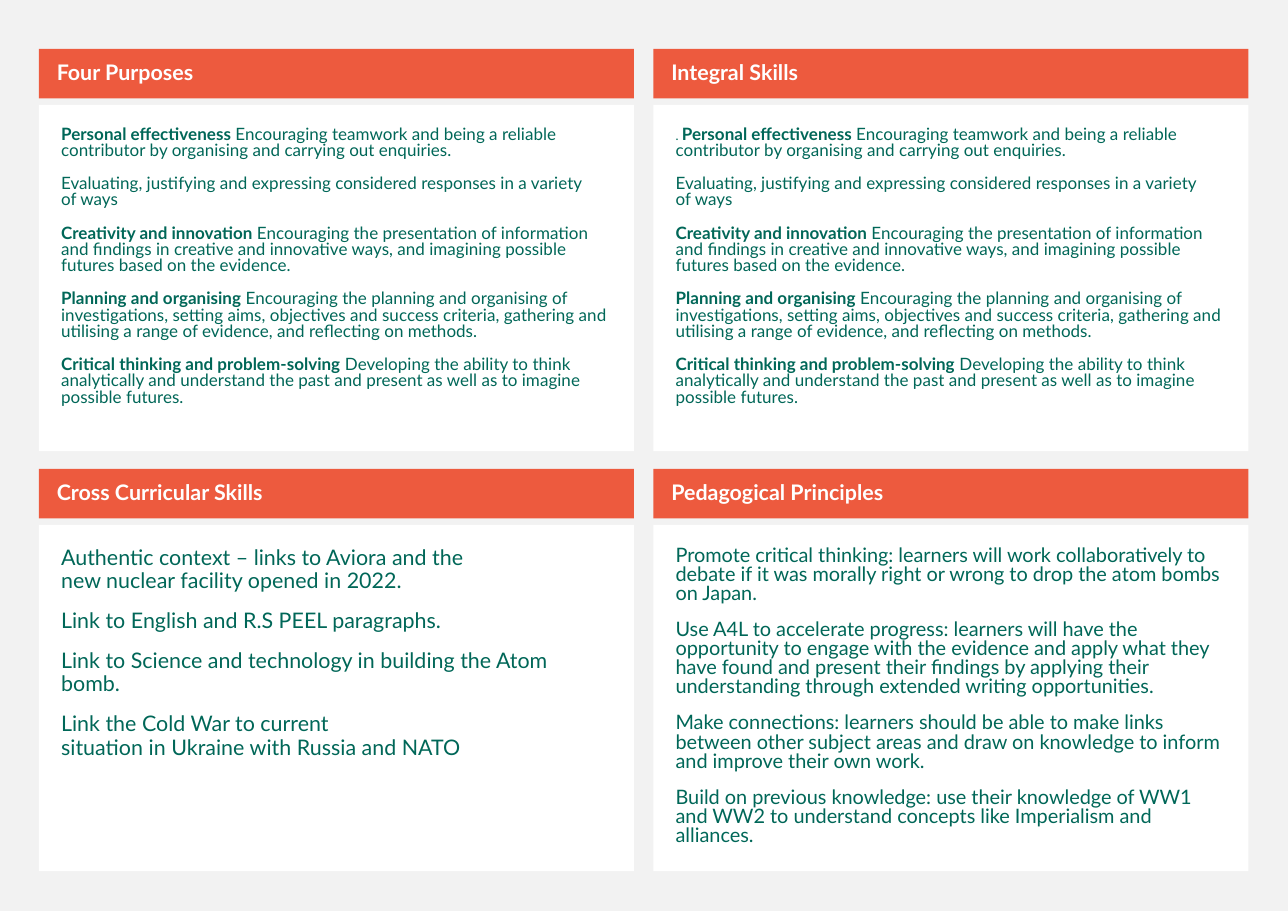
from pptx import Presentation
from pptx.dml.color import RGBColor
from pptx.enum.shapes import MSO_SHAPE
from pptx.enum.text import MSO_ANCHOR, PP_ALIGN
from pptx.util import Cm, Pt

GREY = RGBColor(0xF2, 0xF2, 0xF2)
WHITE = RGBColor(0xFF, 0xFF, 0xFF)
CORAL = RGBColor(0xED, 0x5A, 0x3E)
GREEN = RGBColor(0x00, 0x67, 0x58)
FONT = "Lato"
TIE = chr(160)  # no-break space, keeps words on one line

# Card grid, in centimetres
LEFT, TOP = 0.9, 1.13
STEP_X, STEP_Y = 14.17, 9.68
WIDTH, HEAD_H, BODY_H = 13.72, 1.14, 7.98
BODY_DROP = 1.29

# Each paragraph is a bold lead and the plain text after it
SKILLS = [
    ("Personal effectiveness",
     " Encouraging teamwork and being a reliable contributor by organising "
     "and carrying out enquiries."),
    ("", "Evaluating, justifying and expressing considered responses in a "
     f"variety of{TIE}ways"),
    ("Creativity and innovation",
     " Encouraging the presentation of information and findings in creative "
     "and innovative ways, and imagining possible futures based on the "
     "evidence."),
    ("Planning and organising",
     " Encouraging the planning and organising of investigations, setting "
     "aims, objectives and success criteria, gathering and utilising a range "
     "of evidence, and reflecting on methods."),
    ("Critical thinking and problem-solving",
     " Developing the ability to think analytically and understand the past "
     "and present as well as to imagine possible futures."),
]
CROSS = [
    ("", "Authentic context – links to Aviora and the "
     f"new{TIE}nuclear{TIE}facility{TIE}opened in 2022."),
    ("", "Link to English and R.S PEEL paragraphs."),
    ("", "Link to Science and technology in building the Atom bomb."),
    ("", "Link the Cold War to current "
     f"situation{TIE}in{TIE}Ukraine{TIE}with{TIE}Russia and NATO"),
]
PEDAGOGY = [
    ("", "Promote critical thinking: learners will work collaboratively to "
     "debate if it was morally right or wrong to drop the atom bombs on "
     "Japan."),
    ("", "Use A4L to accelerate progress: learners will have the opportunity "
     "to engage with the evidence and apply what they have found and present "
     "their findings by applying their understanding through extended "
     "writing opportunities."),
    ("", "Make connections: learners should be able to make links between "
     "other subject areas and draw on knowledge to inform and improve their "
     "own work."),
    ("", "Build on previous knowledge: use their knowledge of WW1 and WW2 to "
     "understand concepts like Imperialism and alliances."),
]

# Title, paragraphs, text size, line spacing, small opening mark
CARDS = [
    ("Four Purposes", SKILLS, 11.1, 0.8, ""),
    ("Integral Skills", SKILLS, 11.1, 0.8, f".{TIE}"),
    ("Cross Curricular Skills", CROSS, 14, 0.9, ""),
    ("Pedagogical Principles", PEDAGOGY, 13, 0.8, ""),
]


def add_box(slide, x, y, height, fill):
    box = slide.shapes.add_shape(
        MSO_SHAPE.RECTANGLE, Cm(x), Cm(y), Cm(WIDTH), Cm(height))
    box.shadow.inherit = False
    box.fill.solid()
    box.fill.fore_color.rgb = fill
    box.line.fill.background()
    box.text_frame.word_wrap = True
    return box.text_frame


def add_run(para, text, size, color, bold=False):
    run = para.add_run()
    run.text = text
    run.font.name = FONT
    run.font.size = Pt(size)
    run.font.bold = bold
    run.font.color.rgb = color


def add_head(slide, x, y, title):
    frame = add_box(slide, x, y, HEAD_H, CORAL)
    frame.vertical_anchor = MSO_ANCHOR.MIDDLE
    frame.margin_left = Cm(0.41)
    para = frame.paragraphs[0]
    para.alignment = PP_ALIGN.LEFT
    para.line_spacing = 0.9
    add_run(para, title, 14, WHITE, True)


def add_body(slide, x, y, items, size, spacing, mark):
    frame = add_box(slide, x, y, BODY_H, WHITE)
    frame.vertical_anchor = MSO_ANCHOR.TOP
    frame.margin_left = frame.margin_right = Cm(0.51)
    frame.margin_top = frame.margin_bottom = Cm(0.51)
    for i, (lead, rest) in enumerate(items):
        para = frame.add_paragraph() if i else frame.paragraphs[0]
        para.alignment = PP_ALIGN.LEFT
        para.line_spacing = spacing
        para.space_before = Pt(11)
        if mark and i == 0:
            add_run(para, mark, 8.3, GREEN)
        if lead:
            add_run(para, lead, size, GREEN, True)
        add_run(para, rest, size, GREEN)


def main():
    deck = Presentation()
    deck.slide_width, deck.slide_height = Cm(29.7), Cm(21)

    # Blank page with a grey background
    slide = deck.slides.add_slide(deck.slide_layouts[6])
    slide.background.fill.solid()
    slide.background.fill.fore_color.rgb = GREY

    # Two by two cards
    for i, (title, *body) in enumerate(CARDS):
        row, col = divmod(i, 2)
        x, y = LEFT + col * STEP_X, TOP + row * STEP_Y
        add_head(slide, x, y, title)
        add_body(slide, x, y + BODY_DROP, *body)

    deck.save("out.pptx")


if __name__ == "__main__":
    main()
